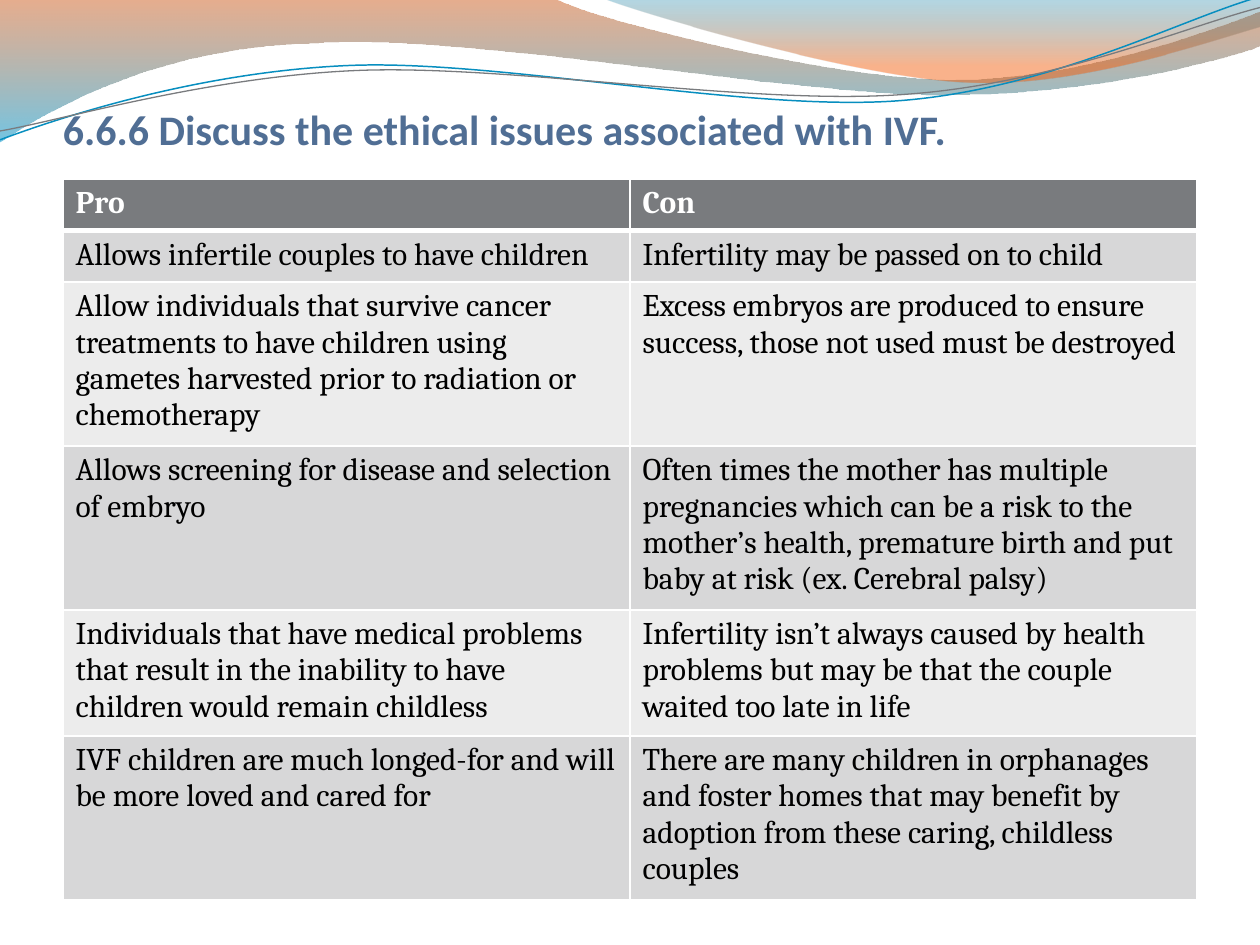
import math

from lxml import etree
from pptx import Presentation
from pptx.dml.color import RGBColor
from pptx.enum.text import MSO_ANCHOR
from pptx.oxml.ns import qn
from pptx.util import Inches, Pt

TOP = MSO_ANCHOR.TOP
COLUMNS, ROWS = 10, 7.5
UNIT = Inches(1)
MARGIN = 0.5
CONTENT_WIDTH = COLUMNS - 2 * MARGIN
ROW_HEIGHT = 0.41
COLORS = {
    "title": "506E94", "header": "797B7E", "odd": "D7D7D8", "even": "ECECEC",
    "white": "FFFFFF", "black": "000000", "blue_line": "078EBF",
    "rust": "C94A04", "sky": "0095CC", "teal": "007AA6", "orange": "F45700",
}
TITLE = "6.6.6 Discuss the ethical issues associated with IVF."
ARGUMENTS = [
    ("Pro", "Con"),
    ("Allows infertile couples to have children",
     "Infertility may be passed on to child"),
    ("Allow individuals that survive cancer treatments to have children using "
     "gametes harvested prior to radiation or chemotherapy",
     "Excess embryos are produced to ensure success, those not used must be destroyed"),
    ("Allows screening for disease and selection of embryo",
     "Often times the mother has multiple pregnancies which can be a risk to the "
     "mother’s health, premature birth and put baby at risk (ex. Cerebral palsy)"),
    ("Individuals that have medical problems that result in the inability to have "
     "children would remain childless",
     "Infertility isn’t always caused by health problems but may be that the couple "
     "waited too late in life"),
    ("IVF children are much longed-for and will be more loved and cared for",
     "There are many children in orphanages and foster homes that may benefit by "
     "adoption from these caring, childless couples"),
]
LEFT_WAVE = [
    [(0, 0)], [(4.4, -0.01)],
    [(4.76, 0.17), (6.64, 0.63), (7.58, 0.63)],
    [(8.53, 0.63), (9.58, 0.26), (10, 0.09)],
    [(10.01, 0.36)],
    [(9.83, 0.44), (8.7, 0.76), (7.46, 0.75)],
    [(6.22, 0.75), (3.82, 0.28), (2.57, 0.34)],
    [(1.29, 0.36), (0.46, 0.83), (-0.01, 1.13)],
]
RIGHT_WAVE = [
    [(4.79, -0.01)],
    [(5.09, 0.11), (6.82, 0.62), (7.69, 0.65)],
    [(8.56, 0.69), (9.61, 0.32), (10, 0.21)],
    [(10, 0)],
]
BLUE_STRAND = [
    [(0, 1.11)],
    [(0.48, 0.93), (1.58, 0.57), (2.77, 0.52)],
    [(3.95, 0.47), (5.93, 0.89), (7.13, 0.8)],
    [(8.33, 0.71), (9.38, 0.15), (9.98, -0.02)],
]
GRAY_STRAND = [
    [(0, 1.04)],
    [(0.47, 0.96), (1.64, 0.61), (2.83, 0.56)],
    [(4.03, 0.51), (5.97, 0.84), (7.17, 0.75)],
    [(8.36, 0.67), (9.41, 0.21), (10, 0.06)],
]


def units(value):
    return round(value * UNIT)


def color(name):
    return RGBColor.from_string(COLORS[name])


def turn(segments, center, degrees):
    cosine, sine = math.cos(math.radians(degrees)), math.sin(math.radians(degrees))

    def turn_point(point):
        x, y = point[0] - center[0], point[1] - center[1]
        return center[0] + x * cosine - y * sine, center[1] + x * sine + y * cosine

    return [[turn_point(point) for point in segment] for segment in segments]


def add_outline(slide, segments, close):
    outline = [[(units(x), units(y)) for x, y in segment] for segment in segments]
    corners = [segment[-1] for segment in outline]
    builder = slide.shapes.build_freeform(*corners[0])
    builder.add_line_segments(corners[1:], close=close)
    shape = builder.convert_to_shape()
    shape.shadow.inherit = False
    steps = list(shape._element.spPr.iter(qn("a:lnTo")))
    for step, segment in zip(steps, outline[1:]):
        if len(segment) == 3:
            step.tag = qn("a:cubicBezTo")
            for index, (x, y) in enumerate(segment[:2]):
                point = etree.Element(qn("a:pt"), x=str(x - shape.left),
                                      y=str(y - shape.top))
                step.insert(index, point)
    return shape


def add_wave(slide, segments, stops):
    shape = add_outline(slide, segments, True)
    shape.line.fill.background()
    shape.fill.gradient()
    shape.fill.gradient_angle = 270
    for stop, (position, name, _) in zip(shape.fill.gradient_stops, stops):
        stop.position = position
        stop.color.rgb = color(name)
    colors = shape._element.spPr.iter(qn("a:srgbClr"))
    for element, (_, _, opacity) in zip(colors, stops):
        etree.SubElement(element, qn("a:alpha")).set("val", str(opacity * 1000))


def add_strand(slide, segments, center, name, width):
    tilt = 2.7
    shape = add_outline(slide, turn(segments, center, tilt), False)
    shape.rotation = 360 - tilt
    shape.fill.background()
    shape.line.color.rgb = color(name)
    shape.line.width = Pt(width)


def add_run(paragraph, text, font, size, name, bold):
    run = paragraph.add_run()
    run.text = text
    run.font.name = font
    run.font.size = Pt(size)
    run.font.bold = bold
    run.font.color.rgb = color(name)


def add_title(slide):
    box = slide.shapes.add_textbox(units(MARGIN), units(0.77),
                                   units(CONTENT_WIDTH), units(1.25))
    frame = box.text_frame
    frame.word_wrap = True
    frame.vertical_anchor = TOP
    frame.margin_left = frame.margin_right = frame.margin_bottom = 0
    frame.margin_top = units(0.05)
    add_run(frame.paragraphs[0], TITLE, "Calibri", 24, "title", True)


def set_borders(cell, top, bottom):
    properties = cell._tc.get_or_add_tcPr()
    for side, width in (("L", 1), ("R", 1), ("T", top), ("B", bottom)):
        line = etree.SubElement(properties, qn(f"a:ln{side}"), w=str(Pt(width)))
        fill = etree.SubElement(line, qn("a:solidFill"))
        etree.SubElement(fill, qn("a:srgbClr"), val=COLORS["white"])


def add_arguments(slide):
    count = len(ARGUMENTS)
    table = slide.shapes.add_table(count, 2, units(MARGIN), units(1.42),
                                   units(CONTENT_WIDTH),
                                   units(ROW_HEIGHT * count)).table
    for index, texts in enumerate(ARGUMENTS):
        is_header = index == 0
        fill = "header" if is_header else "odd" if index % 2 else "even"
        for column, text in enumerate(texts):
            cell = table.cell(index, column)
            set_borders(cell, 3 if index == 1 else 1, 3 if is_header else 1)
            cell.fill.solid()
            cell.fill.fore_color.rgb = color(fill)
            add_run(cell.text_frame.paragraphs[0], text, "Cambria", 18,
                    "white" if is_header else "black", is_header)


def main():
    presentation = Presentation()
    presentation.slide_width = units(COLUMNS)
    presentation.slide_height = units(ROWS)
    slide = presentation.slides.add_slide(presentation.slide_layouts[6])
    add_wave(slide, LEFT_WAVE, [(0, "rust", 45), (1, "sky", 55)])
    add_wave(slide, RIGHT_WAVE, [(0, "teal", 30), (0.8, "orange", 45)])
    add_strand(slide, BLUE_STRAND, (4.99, 0.57), "blue_line", 0.85)
    add_strand(slide, GRAY_STRAND, (5, 0.59), "header", 0.75)
    add_title(slide)
    add_arguments(slide)
    presentation.save("out.pptx")


if __name__ == "__main__":
    main()
